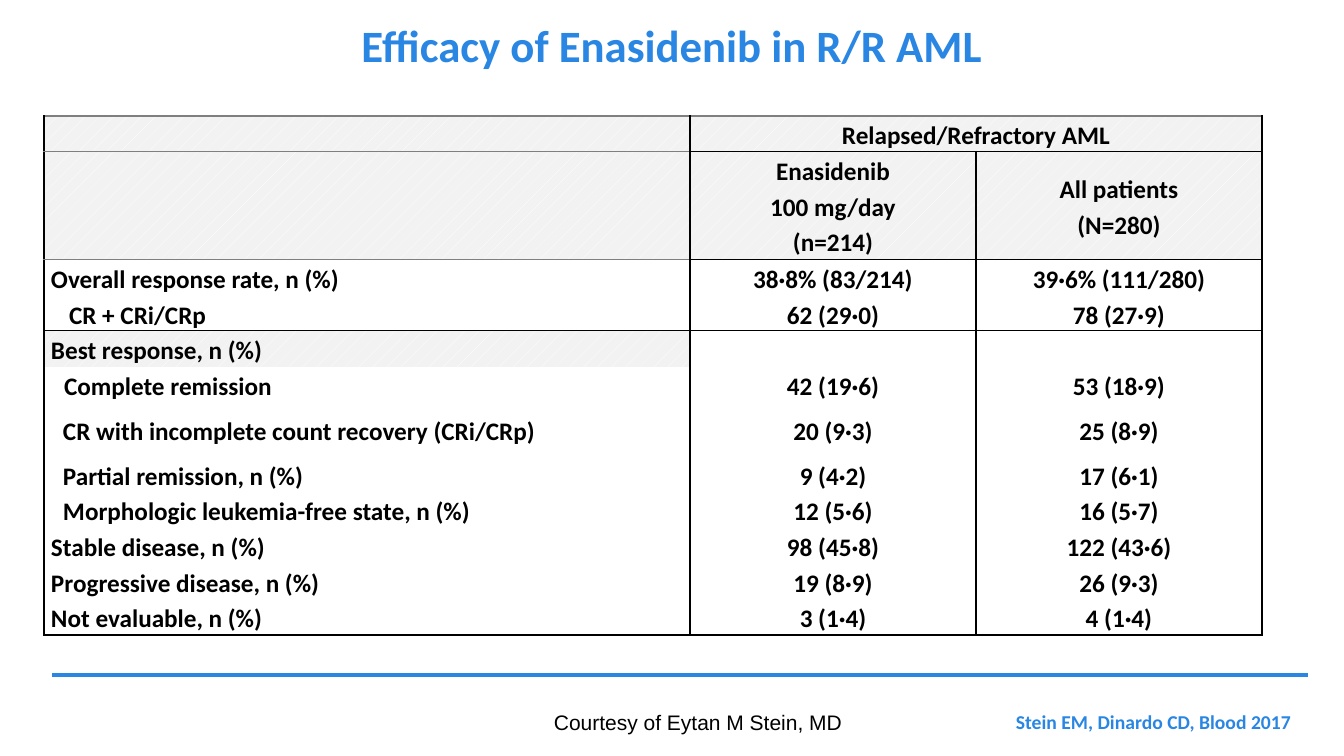
import pptx
import pptx.dml.color
import pptx.enum.dml
import pptx.enum.shapes
import pptx.enum.text
import pptx.oxml
import pptx.oxml.ns
import pptx.util

BLUE, BLACK, GREY, PALE, WHITE = "2986E2", "000000", "7F7F7F", "F2F2F2", "FFFFFF"
ALIGN = pptx.enum.text.PP_ALIGN
ANCHOR = pptx.enum.text.MSO_ANCHOR
AUTO_SIZE = pptx.enum.text.MSO_AUTO_SIZE


def px(length):
    return pptx.util.Emu(round(length * 914400 / 100.8))


def color(hex_code):
    return pptx.dml.color.RGBColor.from_string(hex_code)


class SlideBuilder:
    """Holds the shared style and the slide being filled."""

    font = "Calibri"
    cell_size = 18
    cell_spacing = 1.15
    cell_inset = 7

    def __init__(self, slide):
        self.slide = slide

    def style(self, paragraph, size, hex_code, bold=True, font=None):
        paragraph.font.name = font or self.font
        paragraph.font.size = pptx.util.Pt(size)
        paragraph.font.bold = bold
        paragraph.font.color.rgb = color(hex_code)

    def text(self, words, box, size, hex_code, bold=True, font=None,
             align=ALIGN.LEFT, anchor=ANCHOR.TOP, wrap=False):
        frame = self.slide.shapes.add_textbox(*map(px, box)).text_frame
        frame.word_wrap = wrap
        frame.auto_size = AUTO_SIZE.NONE if wrap else AUTO_SIZE.SHAPE_TO_FIT_TEXT
        frame.vertical_anchor = anchor
        paragraph = frame.paragraphs[0]
        paragraph.text = words
        paragraph.alignment = align
        self.style(paragraph, size, hex_code, bold, font)

    def rule(self, start, end, hex_code, width):
        line = self.slide.shapes.add_connector(
            pptx.enum.shapes.MSO_CONNECTOR.STRAIGHT, *map(px, start + end))
        line.line.color.rgb = color(hex_code)
        line.line.width = pptx.util.Pt(width)
        properties = line._element.spPr
        properties.append(properties.makeelement(pptx.oxml.ns.qn("a:effectLst"), {}))

    def table(self, corner, widths, heights):
        frame = self.slide.shapes.add_table(
            len(heights), len(widths), *map(px, (*corner, sum(widths), sum(heights))))
        table = frame.table
        table.first_row = table.horz_banding = False
        for column, width in zip(table.columns, widths):
            column.width = px(width)
        for row, height in zip(table.rows, heights):
            row.height = px(height)
        return table

    def cell(self, cell, words, centred, indent, shaded, borders):
        cell.margin_left = cell.margin_right = px(self.cell_inset)
        cell.margin_top = cell.margin_bottom = 0
        cell.vertical_anchor = ANCHOR.MIDDLE
        paragraph = cell.text_frame.paragraphs[0]
        paragraph.text = words
        paragraph.alignment = ALIGN.CENTER if centred else ALIGN.LEFT
        paragraph.line_spacing = self.cell_spacing
        margin, first_line = indent
        paragraph_properties = paragraph._p.get_or_add_pPr()
        paragraph_properties.set("marL", str(px(margin)))
        paragraph_properties.set("indent", str(px(first_line)))
        self.style(paragraph, self.cell_size, BLACK)
        # Borders come before the fill in the cell properties
        for side, hex_code in zip("LRTB", borders):
            paint = (f'<a:solidFill><a:srgbClr val="{hex_code}"/></a:solidFill>'
                     if hex_code else "<a:noFill/>")
            cell._tc.get_or_add_tcPr().append(pptx.oxml.parse_xml(
                f'<a:ln{side} {pptx.oxml.ns.nsdecls("a")} w="12700">{paint}</a:ln{side}>'))
        if shaded:
            cell.fill.patterned()
            cell.fill.pattern = pptx.enum.dml.MSO_PATTERN.PERCENT_5
            cell.fill.fore_color.rgb = color(WHITE)
            cell.fill.back_color.rgb = color(PALE)
        else:
            cell.fill.background()


FLUSH, HANGING, NESTED = (0, 0), (12, -12), (12, 0)
# Label, its indent, the 100 mg/day group, all patients
RESPONSES = [
    ("", FLUSH, "Relapsed/Refractory AML", ""),
    ("", FLUSH, "Enasidenib\n100 mg/day\n(n=214)", "All patients\n(N=280)"),
    ("Overall response rate, n (%)", HANGING, "38·8% (83/214)", "39·6% (111/280)"),
    ("CR + CRi/CRp", (18, 0), "62 (29·0)", "78 (27·9)"),
    ("Best response, n (%)", FLUSH, "", ""),
    ("Complete remission", (25, -12), "42 (19·6)", "53 (18·9)"),
    ("CR with incomplete count recovery (CRi/CRp)", NESTED, "20 (9·3)", "25 (8·9)"),
    ("Partial remission, n (%)", NESTED, "9 (4·2)", "17 (6·1)"),
    ("Morphologic leukemia-free state, n (%)", NESTED, "12 (5·6)", "16 (5·7)"),
    ("Stable disease, n (%)", FLUSH, "98 (45·8)", "122 (43·6)"),
    ("Progressive disease, n (%)", FLUSH, "19 (8·9)", "26 (9·3)"),
    ("Not evaluable, n (%)", FLUSH, "3 (1·4)", "4 (1·4)"),
]
HEADER_ROWS = 2
BEST_RESPONSE_ROW = 4
ROW_HEIGHTS = [35, 108, 36, 35, 36, 35, 54, 36, 35, 36, 35, 36]


def edge_color(edge, column):
    """Colour of the horizontal rule above row number `edge`."""
    if edge == 0 or (edge <= HEADER_ROWS and column == 0):
        return GREY
    ruled = (1, HEADER_ROWS, BEST_RESPONSE_ROW, len(RESPONSES))
    return BLACK if edge in ruled else None


def main():
    deck = pptx.Presentation()
    deck.slide_width, deck.slide_height = px(1344), px(756)
    builder = SlideBuilder(deck.slides.add_slide(deck.slide_layouts[6]))

    # Footer rule and title
    builder.rule((52, 675), (1308, 675), BLUE, 2.25)
    builder.text("Efficacy of Enasidenib in R/R AML", (44, 10, 1256, 69), 32, BLUE,
                 align=ALIGN.CENTER, anchor=ANCHOR.MIDDLE, wrap=True)

    # Response table
    responses = builder.table((44, 116), [646, 286, 286], ROW_HEIGHTS)
    responses.cell(0, 1).merge(responses.cell(0, 2))
    for row, (label, indent, *values) in enumerate(RESPONSES):
        for column, words in enumerate([label, *values]):
            is_label = column == 0
            shaded = row < HEADER_ROWS or (is_label and row == BEST_RESPONSE_ROW)
            borders = (BLACK, BLACK, edge_color(row, column), edge_color(row + 1, column))
            builder.cell(responses.cell(row, column), words, not is_label,
                         indent if is_label else FLUSH, shaded, borders)

    # Citation and credit
    builder.text("Stein EM, Dinardo CD, Blood 2017", (1006, 705, 307, 34), 14, BLUE)
    builder.text("Courtesy of Eytan M Stein, MD", (544, 705, 311, 35), 15, BLACK,
                 bold=False, font="Arial")

    deck.save("out.pptx")


if __name__ == "__main__":
    main()
